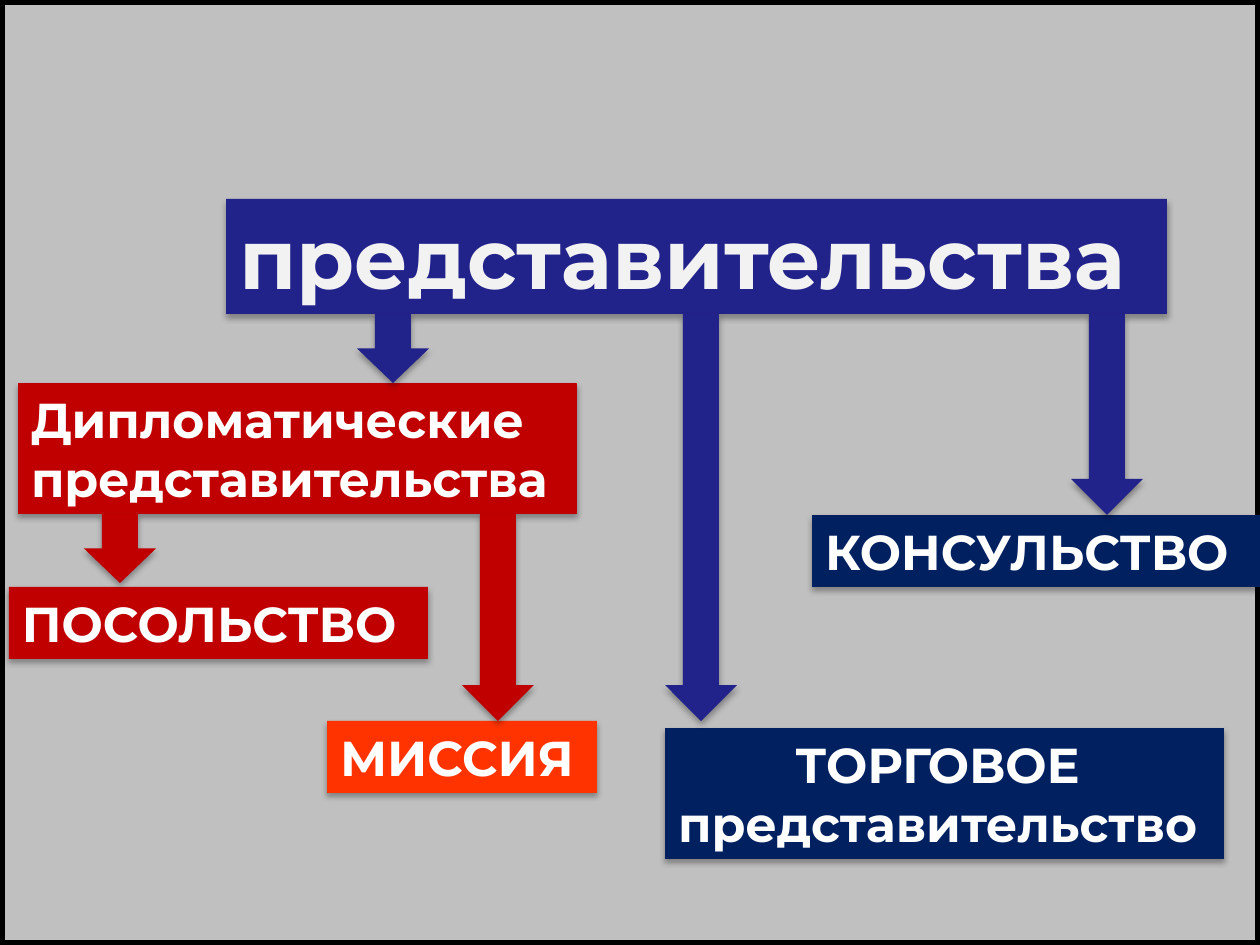
from dataclasses import dataclass

import lxml.etree
import pptx
import pptx.dml.color
import pptx.enum.shapes
import pptx.enum.text
import pptx.oxml
import pptx.oxml.ns
import pptx.util

PX_PER_INCH = 126
SHAPES = pptx.enum.shapes.MSO_SHAPE
ALIGN = pptx.enum.text.PP_ALIGN


@dataclass(frozen=True)
class Theme:
    font: str = "Montserrat"
    title_size: int = 48
    label_size: int = 28
    background: str = "C0C0C0"
    frame: str = "000000"
    indigo: str = "22228B"
    red: str = "C00000"
    orange: str = "FF3300"
    navy: str = "002060"
    white: str = "FFFFFF"
    off_white: str = "F2F2F2"


THEME = Theme()


def px(length):
    return round(length * 914400 / PX_PER_INCH)


def rgb(value):
    return pptx.dml.color.RGBColor.from_string(value)


def add_shadow(shape):
    """Give the shape a soft shadow straight below it."""
    shape.shadow.inherit = False
    effects = shape._element.spPr.find(pptx.oxml.ns.qn("a:effectLst"))
    effects.append(pptx.oxml.parse_xml(
        f'<a:outerShdw {pptx.oxml.ns.nsdecls("a")} blurRad="44450" dist="27940" '
        'dir="5400000" rotWithShape="0"><a:srgbClr val="000000">'
        '<a:alpha val="32000"/></a:srgbClr></a:outerShdw>'))


def add_filled_shape(slide, preset, left, top, width, height, fill):
    shape = slide.shapes.add_shape(preset, px(left), px(top), px(width), px(height))
    shape.fill.solid()
    shape.fill.fore_color.rgb = rgb(fill)
    shape.line.fill.background()
    add_shadow(shape)
    return shape


def add_label(slide, text, left, top, width, height, fill,
              size=THEME.label_size, color=THEME.white,
              align=ALIGN.LEFT, insets=(13, 13)):
    shape = add_filled_shape(slide, SHAPES.RECTANGLE, left, top, width, height, fill)
    text_frame = shape.text_frame
    text_frame.word_wrap = True
    text_frame.vertical_anchor = pptx.enum.text.MSO_ANCHOR.TOP
    text_frame.margin_left, text_frame.margin_right = map(px, insets)
    text_frame.text = text
    for paragraph in text_frame.paragraphs:
        paragraph.alignment = align
        for run in paragraph.runs:
            run.font.name = THEME.font
            run.font.size = pptx.util.Pt(size)
            run.font.bold = True
            run.font.color.rgb = rgb(color)


def add_down_arrow(slide, left, top, bottom, fill):
    add_filled_shape(slide, SHAPES.DOWN_ARROW, left, top, 72, bottom - top, fill)


def add_frame(slide, presentation):
    frame = slide.shapes.add_shape(SHAPES.RECTANGLE, 0, 0,
                                   presentation.slide_width, presentation.slide_height)
    frame.shadow.inherit = False
    frame.fill.background()
    frame.line.color.rgb = rgb(THEME.frame)
    frame.line.width = pptx.util.Pt(6)


def main():
    presentation = pptx.Presentation()
    presentation.slide_width = px(1260)
    presentation.slide_height = px(945)
    slide = presentation.slides.add_slide(presentation.slide_layouts[6])
    slide.background.fill.solid()
    slide.background.fill.fore_color.rgb = rgb(THEME.background)
    add_frame(slide, presentation)

    add_label(slide, "Дипломатические\nпредставительства", 18, 383, 559, 131, THEME.red)
    add_label(slide, "ПОСОЛЬСТВО", 9, 587, 419, 72, THEME.red)
    add_label(slide, "МИССИЯ", 327, 721, 270, 72, THEME.orange)
    add_label(slide, "КОНСУЛЬСТВО", 812, 515, 448, 72, THEME.navy)
    add_label(slide, "ТОРГОВОЕ\nпредставительство", 665, 728, 559, 131, THEME.navy,
              align=ALIGN.CENTER, insets=(0, 14))
    add_label(slide, "представительства", 226, 199, 941, 115, THEME.indigo,
              size=THEME.title_size, color=THEME.off_white)

    for left, bottom in ((357, 383), (665, 721), (1071, 515)):
        add_down_arrow(slide, left, 314, bottom, THEME.indigo)
    for left, bottom in ((462, 721), (84, 583)):
        add_down_arrow(slide, left, 514, bottom, THEME.red)

    presentation.save("out.pptx")


if __name__ == "__main__":
    main()
